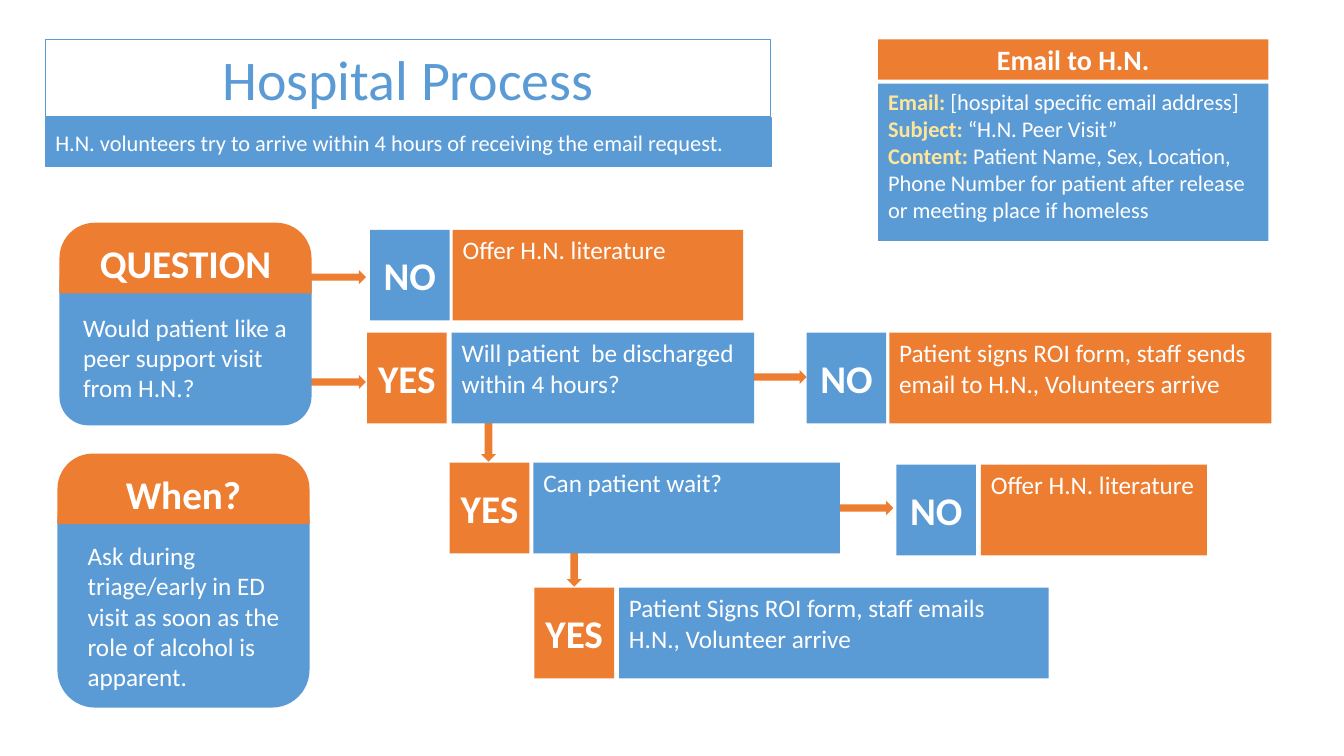
from dataclasses import dataclass

from pptx import Presentation
from pptx.dml.color import RGBColor as RGB
from pptx.enum.shapes import MSO_SHAPE as SHAPE
from pptx.enum.text import MSO_ANCHOR as ANCHOR, PP_ALIGN as ALIGN
from pptx.util import Pt

EMU_PER_PX = 9144  # 100 px to the inch


@dataclass(frozen=True)
class Theme:
    font: str = "Calibri"
    blue: RGB = RGB(0x5B, 0x9B, 0xD5)
    orange: RGB = RGB(0xED, 0x7D, 0x31)
    yellow: RGB = RGB(0xFE, 0xE5, 0x99)
    white: RGB = RGB(0xFF, 0xFF, 0xFF)
    title: int = 40
    label: int = 28
    heading: int = 20
    body: int = 18
    note: int = 16


THEME = Theme()


def px(length):
    return length * EMU_PER_PX


def add_box(slide, left, top, width, height, fill=None, kind=SHAPE.RECTANGLE,
            line_width=None, adjustments=()):
    shape = slide.shapes.add_shape(kind, px(left), px(top), px(width), px(height))
    shape.shadow.inherit = False
    for index, value in enumerate(adjustments):
        shape.adjustments[index] = value
    if fill is None:
        shape.fill.background()
    else:
        shape.fill.solid()
        shape.fill.fore_color.rgb = fill
    if line_width is None:
        shape.line.fill.background()
    else:
        shape.line.color.rgb = THEME.blue
        shape.line.width = Pt(line_width)
    return shape


def write(shape, *paragraphs, size=THEME.body, color=THEME.white, bold=False,
          align=ALIGN.LEFT, anchor=ANCHOR.TOP, margins=(10, 5, 10, 5)):
    """Each paragraph is a string, or a (yellow lead, rest) pair."""
    frame = shape.text_frame
    frame.word_wrap = True
    frame.vertical_anchor = anchor
    (frame.margin_left, frame.margin_top,
     frame.margin_right, frame.margin_bottom) = map(px, margins)
    for index, content in enumerate(paragraphs):
        paragraph = frame.paragraphs[0] if index == 0 else frame.add_paragraph()
        paragraph.alignment = align
        if isinstance(content, str):
            runs = [(content, color, bold)]
        else:
            lead, rest = content
            runs = [(lead, THEME.yellow, True), (rest, color, bold)]
        for text, run_color, run_bold in runs:
            run = paragraph.add_run()
            run.text = text
            run.font.name = THEME.font
            run.font.size = Pt(size)
            run.font.bold = run_bold
            run.font.color.rgb = run_color


def add_label(slide, text, left, top, width, height, fill, size=THEME.label, **outline):
    box = add_box(slide, left, top, width, height, fill, **outline)
    write(box, text, size=size, bold=True, align=ALIGN.CENTER, anchor=ANCHOR.MIDDLE)


def add_step(slide, answer, text, left, top, text_left, text_width, fill):
    """A YES or NO label with the step that follows from it."""
    label_fill = THEME.orange if answer == "YES" else THEME.blue
    add_label(slide, answer, left, top, 79, 90, label_fill)
    write(add_box(slide, text_left, top, text_width, 90, fill), text)


def add_card(slide, heading, text, left, top, body_height, anchor, margins):
    """A rounded card whose heading overlaps the top of its body."""
    body = add_box(slide, left, top + 29, 250, body_height, THEME.blue,
                   SHAPE.ROUNDED_RECTANGLE, adjustments=(0.167,))
    write(body, text, anchor=anchor, margins=margins)
    add_label(slide, heading, left, top, 250, 70, THEME.orange,
              kind=SHAPE.ROUND_2_SAME_RECTANGLE, adjustments=(0.5, 0))


def add_header(slide):
    title = add_box(slide, 45, 39, 719, 77, line_width=0.75)
    write(title, "Hospital Process", size=THEME.title, color=THEME.blue,
          align=ALIGN.CENTER)
    subtitle = add_box(slide, 45, 117, 720, 48, THEME.blue, line_width=1)
    write(subtitle,
          "H.N. volunteers try to arrive within 4 hours of receiving the email request.",
          size=THEME.note, anchor=ANCHOR.MIDDLE)


def add_email_panel(slide):
    add_label(slide, "Email to H.N.", 871, 39, 387, 40, THEME.orange, THEME.heading)
    details = add_box(slide, 871, 83, 387, 156, THEME.blue)
    write(details,
          ("Email: ", "[hospital specific email address]"),
          ("Subject: ", "“H.N. Peer Visit”"),
          ("Content: ", "Patient Name, Sex, Location, Phone Number for patient "
                        "after release or meeting place if homeless"),
          size=THEME.note)


def main():
    presentation = Presentation()
    presentation.slide_width, presentation.slide_height = px(1333), px(750)
    slide = presentation.slides.add_slide(presentation.slide_layouts[6])

    # Arrows lie behind the boxes they join
    for left, top in ((306, 268), (306, 372), (743, 367), (829, 497)):
        add_box(slide, left, top, 57, 14, THEME.orange, SHAPE.RIGHT_ARROW)
    for left, top, height in ((477, 418, 40), (562, 546, 36)):
        add_box(slide, left, top, 15, height, THEME.orange, SHAPE.DOWN_ARROW)

    add_header(slide)
    add_email_panel(slide)

    # Cards on the left
    add_card(slide, "QUESTION", "Would patient like a peer support visit from H.N.?",
             59, 221, 172, ANCHOR.MIDDLE, (15, 42, 5, 5))
    add_card(slide, "When?", "Ask during triage/early in ED visit as soon as the "
             "role of alcohol is apparent.",
             57, 450, 223, ANCHOR.BOTTOM, (19, 5, 10, 5))

    # Decision steps: answer, text, left, top, text left, text width, fill
    steps = (
        ("NO", "Offer H.N. literature", 367, 228, 449, 288, THEME.orange),
        ("YES", "Will patient  be discharged within 4 hours?",
         364, 330, 448, 300, THEME.blue),
        ("NO", "Patient signs ROI form, staff sends email to H.N., Volunteers arrive",
         800, 330, 882, 379, THEME.orange),
        ("YES", "Can patient wait?", 446, 459, 529, 304, THEME.blue),
        ("NO", "Offer H.N. literature", 889, 461, 973, 224, THEME.orange),
        ("YES", "Patient Signs ROI form, staff emails H.N., Volunteer arrive",
         530, 583, 614, 426, THEME.blue),
    )
    for step in steps:
        add_step(slide, *step)

    presentation.save("out.pptx")


if __name__ == "__main__":
    main()
